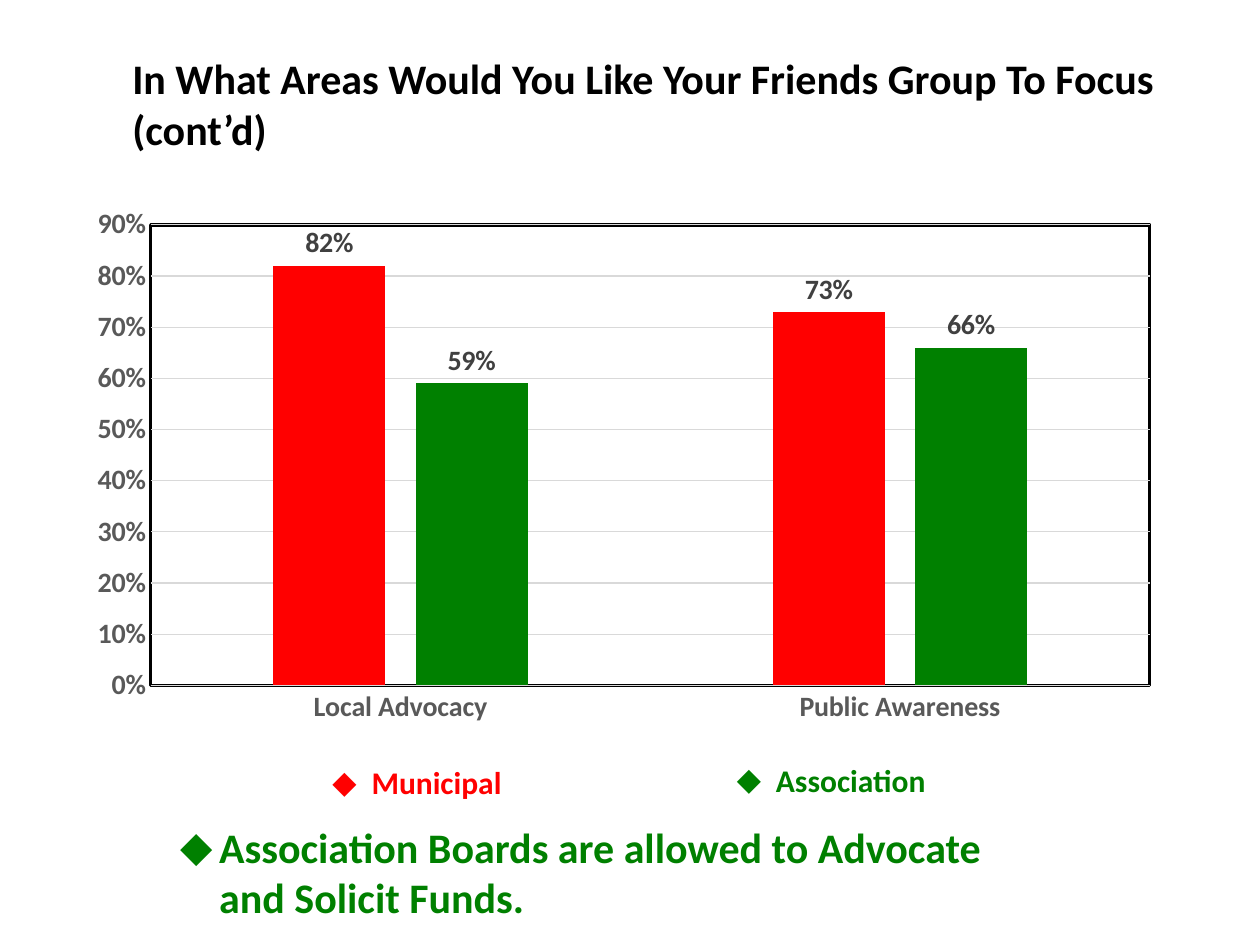
import dataclasses

import lxml.etree
import pptx
import pptx.chart.data
import pptx.dml.color
import pptx.enum.chart
import pptx.enum.text
import pptx.oxml
import pptx.oxml.ns
import pptx.util


@dataclasses.dataclass(frozen=True)
class Theme:
    """Colours, font and type sizes of the slide."""
    font: str = "Calibri"
    ink: str = "000000"
    paper: str = "FFFFFF"
    municipal: str = "FF0000"
    association: str = "008000"
    axis: str = "595959"
    label: str = "404040"
    grid: str = "D9D9D9"
    heading: int = 24
    legend: int = 18
    chart: int = 16


THEME = Theme()
WIDTH, HEIGHT = 10, 7.5
INDENT = pptx.util.Inches(0.31)
qn = pptx.oxml.ns.qn


def rgb(value):
    """Return a colour object for a hex string."""
    return pptx.dml.color.RGBColor.from_string(value)


def box(left, top, width, height):
    """Turn shares of the slide into lengths."""
    return [pptx.util.Inches(round(share * side, 2))
            for share, side in zip((left, top, width, height), (WIDTH, HEIGHT) * 2)]


def place(sp, frame):
    """Move and size a shape."""
    sp.left, sp.top, sp.width, sp.height = frame


def style_font(font, size, color):
    """Apply the bold slide font."""
    font.name, font.size, font.bold = THEME.font, pptx.util.Pt(size), True
    font.color.rgb = rgb(color)


def write(sp, text, size, color):
    """Fill a shape with one left-aligned paragraph."""
    tf = sp.text_frame
    tf.text = text
    tf.word_wrap = True
    tf.auto_size = pptx.enum.text.MSO_AUTO_SIZE.SHAPE_TO_FIT_TEXT
    tf.vertical_anchor = pptx.enum.text.MSO_ANCHOR.TOP
    p = tf.paragraphs[0]
    p.alignment = pptx.enum.text.PP_ALIGN.LEFT
    p.space_before = pptx.util.Pt(0)
    style_font(p.runs[0].font, size, color)
    return p


def add_bullet(p, color):
    """Give a paragraph a coloured diamond and a hanging indent."""
    pPr = p._p.get_or_add_pPr()
    pPr.set("marL", str(INDENT))
    pPr.set("indent", str(-INDENT))
    clr = lxml.etree.SubElement(pPr, qn("a:buClr"))
    lxml.etree.SubElement(clr, qn("a:srgbClr"), val=color)
    lxml.etree.SubElement(pPr, qn("a:buFont"), typeface=THEME.font)
    lxml.etree.SubElement(pPr, qn("a:buChar"), char="◆")


def add_legend(slide, text, color, frame):
    """Add a legend entry as a bulleted text box."""
    sp = slide.shapes.add_textbox(*frame)
    add_bullet(write(sp, text, THEME.legend, color), color)


def style_plot(chart, left, top, width, height):
    """Fix the inner plot area and frame it in black."""
    area = chart._chartSpace.chart.plotArea
    for old in area.findall(qn("c:layout")):
        area.remove(old)
    layout = lxml.etree.Element(qn("c:layout"))
    manual = lxml.etree.SubElement(layout, qn("c:manualLayout"))
    settings = dict(layoutTarget="inner", xMode="edge", yMode="edge",
                    x=left, y=top, w=width, h=height)
    for tag, value in settings.items():
        lxml.etree.SubElement(manual, qn("c:" + tag), val=str(value))
    area.insert(0, layout)
    area.append(pptx.oxml.parse_xml(
        f'<c:spPr {pptx.oxml.ns.nsdecls("c", "a")}>'
        f'<a:solidFill><a:srgbClr val="{THEME.paper}"/></a:solidFill>'
        f'<a:ln w="{pptx.util.Pt(2)}"><a:solidFill><a:srgbClr val="{THEME.ink}"/>'
        '</a:solidFill></a:ln></c:spPr>'))


def style_axes(chart):
    """Format both axes and the gridlines."""
    for axis in (chart.category_axis, chart.value_axis):
        axis.major_tick_mark = axis.minor_tick_mark = pptx.enum.chart.XL_TICK_MARK.NONE
        style_font(axis.tick_labels.font, THEME.chart, THEME.axis)
    values = chart.value_axis
    values.minimum_scale, values.maximum_scale, values.major_unit = 0, 0.9, 0.1
    values.tick_labels.number_format = "0%"
    values.tick_labels.number_format_is_linked = False
    values.format.line.fill.background()
    for line in (chart.category_axis.format.line, values.major_gridlines.format.line):
        line.color.rgb = rgb(THEME.grid)
        line.width = pptx.util.Pt(0.75)


def add_column_chart(slide, categories, series, frame):
    """Add a clustered column chart from (name, values, colour) rows."""
    data = pptx.chart.data.CategoryChartData(number_format="0%")
    data.categories = categories
    for name, values, _ in series:
        data.add_series(name, values)
    kind = pptx.enum.chart.XL_CHART_TYPE.COLUMN_CLUSTERED
    chart = slide.shapes.add_chart(kind, *frame, data).chart
    chart.has_title = chart.has_legend = False
    chart.font.name, chart.font.size = THEME.font, pptx.util.Pt(10)
    plot = chart.plots[0]
    plot.gap_width, plot.overlap, plot.vary_by_categories = 219, -27, False
    for item, (_, _, color) in zip(plot.series, series):
        item.format.fill.solid()
        item.format.fill.fore_color.rgb = rgb(color)
        labels = item.data_labels
        labels.show_value = True
        labels.number_format, labels.number_format_is_linked = "0%", False
        labels.position = pptx.enum.chart.XL_LABEL_POSITION.OUTSIDE_END
        style_font(labels.font, THEME.chart, THEME.label)
    style_axes(chart)
    style_plot(chart, 0.078, 0.208, 0.901, 0.707)


def main():
    """Build the slide and save it."""
    prs = pptx.Presentation()
    prs.slide_width, prs.slide_height = pptx.util.Inches(WIDTH), pptx.util.Inches(HEIGHT)
    slide = prs.slides.add_slide(prs.slide_layouts[1])
    title, body = slide.placeholders
    place(title, box(0.095, 0.049, 0.856, 0.121))
    write(title, "In What Areas Would You Like Your Friends Group To Focus (cont’d)",
          THEME.heading, THEME.ink)
    add_column_chart(slide, ["Local Advocacy", "Public Awareness"],
                     [("Municipal", (0.82, 0.73), THEME.municipal),
                      ("Association", (0.59, 0.66), THEME.association)],
                     box(0.051, 0.095, 0.88, 0.689))
    add_legend(slide, "Municipal", THEME.municipal, box(0.254, 0.801, 0.229, 0.053))
    add_legend(slide, "Association", THEME.association, box(0.575, 0.799, 0.278, 0.053))
    place(body, box(0.133, 0.863, 0.714, 0.121))
    add_bullet(write(body, "Association Boards are allowed to Advocate and Solicit Funds.",
                     THEME.heading, THEME.association), THEME.association)
    prs.save("out.pptx")


main()
